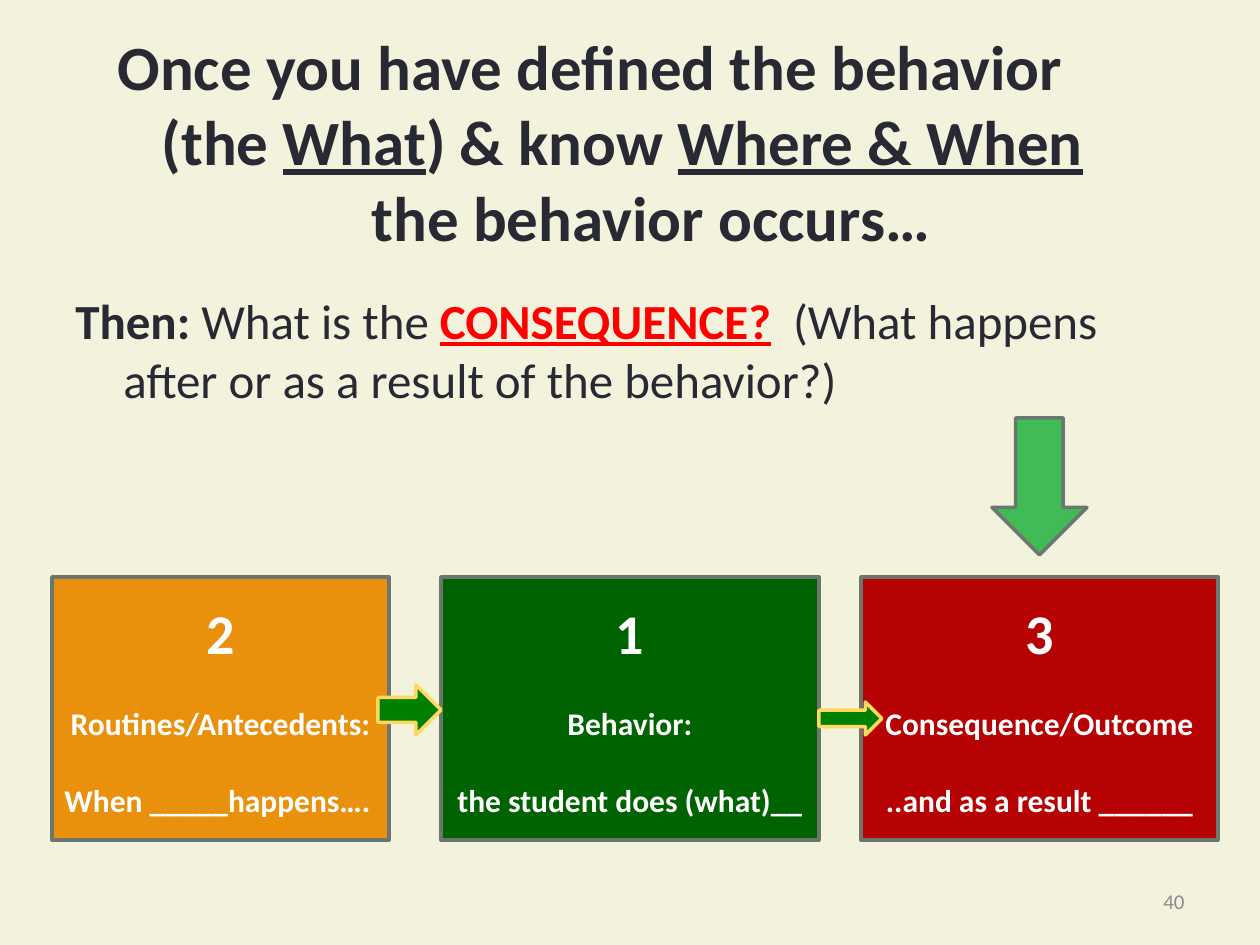
from lxml import etree
from pptx import Presentation
from pptx.dml.color import RGBColor
from pptx.enum.shapes import MSO_SHAPE
from pptx.enum.text import MSO_ANCHOR, MSO_AUTO_SIZE, PP_ALIGN
from pptx.oxml.ns import qn
from pptx.util import Pt

LEFT, CENTER, RIGHT = PP_ALIGN.LEFT, PP_ALIGN.CENTER, PP_ALIGN.RIGHT
TOP, MIDDLE = MSO_ANCHOR.TOP, MSO_ANCHOR.MIDDLE
RECTANGLE = MSO_SHAPE.RECTANGLE
RIGHT_ARROW, DOWN_ARROW = MSO_SHAPE.RIGHT_ARROW, MSO_SHAPE.DOWN_ARROW

CREAM = RGBColor(0xF3, 0xF2, 0xDC)
INK = RGBColor(0x29, 0x29, 0x34)
RED = RGBColor(0xFF, 0x00, 0x00)
WHITE = RGBColor(0xFF, 0xFF, 0xFF)
GREY = RGBColor(0x8D, 0x8D, 0x8F)
OUTLINE = RGBColor(0x6B, 0x76, 0x6F)
ORANGE = RGBColor(0xE9, 0x91, 0x0C)
DARK_GREEN = RGBColor(0x00, 0x63, 0x01)
DARK_RED = RGBColor(0xB6, 0x02, 0x02)
ARROW_GREEN = RGBColor(0x00, 0x80, 0x00)
YELLOW = RGBColor(0xFF, 0xD9, 0x5E)
LIGHT_GREEN = RGBColor(0x40, 0xBC, 0x56)

FONT = "Calibri"
EMU_PER_PX = 914400 // 126

# Content: each run is (text, format)
UNDERLINED = {"underline": True}
TITLE_LINES = [  # first-line indent in px, runs
    (0, [("Once you have defined the behavior", {})]),
    (44, [("(the ", {}), ("What", UNDERLINED), (") & know ", {}),
          ("Where & When\t", UNDERLINED)]),
    (254, [("the behavior occurs…", {})]),
]
TITLE_TAB = 1025
QUESTION = [
    ("Then:", {"bold": True}),
    (" What is the ", {}),
    ("CONSEQUENCE?", {"bold": True, "underline": True, "color": RED}),
    ("  (What happens after or as a result of the behavior?)", {}),
]
# left, width, fill, number, number indent, heading, sentence, sentence alignment
STEPS = [
    (52, 337, ORANGE, "2", 0, "Routines/Antecedents:", "When _____happens….", LEFT),
    (441, 378, DARK_GREEN, "1", -25, "Behavior:", "the student does (what)__", CENTER),
    (861, 357, DARK_RED, "3", 0, "Consequence/Outcome", "..and as a result ______", CENTER),
]
STEP_TOP, STEP_HEIGHT = 577, 263
ARROWS = [  # preset, (left, top, width, height), fill, line
    (RIGHT_ARROW, (378, 685, 63, 50), ARROW_GREEN, YELLOW),
    (RIGHT_ARROW, (819, 702, 63, 33), ARROW_GREEN, YELLOW),
    (DOWN_ARROW, (992, 418, 95, 137), LIGHT_GREEN, OUTLINE),
]


def px(*lengths):
    return [round(length * EMU_PER_PX) for length in lengths]


def write(frame, runs, *, size, color=INK, bold=False, align=LEFT,
          margin=0, indent=0, before=0, first=False):
    """Add one paragraph of (text, format) runs, or of one plain string."""
    paragraph = frame.paragraphs[0] if first else frame.add_paragraph()
    paragraph.alignment = align
    paragraph.space_before = Pt(before)
    properties = paragraph._p.get_or_add_pPr()
    for name, length in (("marL", margin), ("indent", indent)):
        properties.set(name, str(px(length)[0]))
    for text, style in [(runs, {})] if isinstance(runs, str) else runs:
        run = paragraph.add_run()
        run.text = text
        run.font.name = FONT
        run.font.size = Pt(size)
        run.font.bold = style.get("bold", bold)
        run.font.underline = style.get("underline", False)
        run.font.color.rgb = style.get("color", color)
    return paragraph


def prepare(frame, anchor):
    frame.word_wrap = True
    frame.auto_size = MSO_AUTO_SIZE.NONE
    frame.vertical_anchor = anchor
    return frame


def add_filled(slide, preset, box, fill, line):
    shape = slide.shapes.add_shape(preset, *px(*box))
    shape.shadow.inherit = False
    shape.fill.solid()
    shape.fill.fore_color.rgb = fill
    shape.line.color.rgb = line
    shape.line.width = Pt(2)
    return shape


def main():
    deck = Presentation()
    deck.slide_width, deck.slide_height = px(1260, 945)
    slide = deck.slides.add_slide(deck.slide_layouts[5])
    slide.background.fill.solid()
    slide.background.fill.fore_color.rgb = CREAM

    # Title, stepped in line by line; the tab carries the underline on
    title = slide.shapes.title
    title.left, title.top, title.width, title.height = px(105, 21, 1092, 250)
    frame = prepare(title.text_frame, TOP)
    for number, (indent, runs) in enumerate(TITLE_LINES):
        line = write(frame, runs, size=36, bold=True, indent=indent, first=number == 0)
        if any("\t" in text for text, _ in runs):
            tabs = etree.SubElement(line._p.get_or_add_pPr(), qn("a:tabLst"))
            etree.SubElement(tabs, qn("a:tab"), pos=str(px(TITLE_TAB)[0]), algn="l")

    # Question
    question = slide.shapes.add_textbox(*px(63, 284, 1134, 132))
    write(prepare(question.text_frame, TOP), QUESTION, size=28,
          margin=48, indent=-48, first=True)

    # Three steps
    for left, width, fill, number, shift, heading, sentence, align in STEPS:
        step = add_filled(slide, RECTANGLE, (left, STEP_TOP, width, STEP_HEIGHT),
                          fill, OUTLINE)
        frame = prepare(step.text_frame, MIDDLE)
        style = {"color": WHITE, "bold": True}
        write(frame, number, size=32, align=CENTER, indent=shift, first=True, **style)
        write(frame, heading, size=18, align=CENTER, before=22, **style)
        write(frame, sentence, size=18, align=align, before=22, **style)

    # Arrows
    for arrow in ARROWS:
        add_filled(slide, *arrow)

    # Page number
    page = slide.shapes.add_textbox(*px(903, 876, 294, 50))
    write(prepare(page.text_frame, MIDDLE), "40", size=12, color=GREY,
          align=RIGHT, first=True)

    deck.save("out.pptx")


if __name__ == "__main__":
    main()
